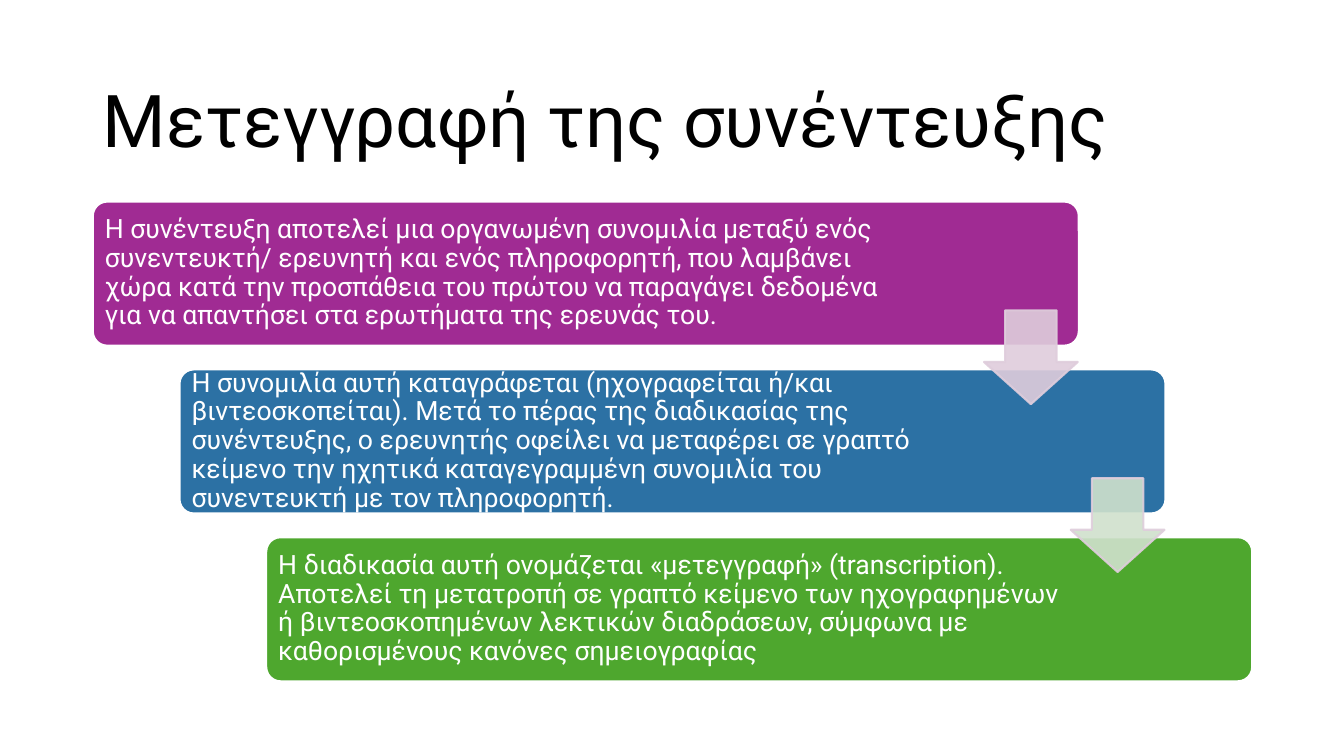
"""Build the slide on transcribing an interview: three stepped cards joined by arrows."""
from lxml import etree
from pptx import Presentation
from pptx.dml.color import RGBColor
from pptx.enum.shapes import MSO_SHAPE
from pptx.enum.text import MSO_ANCHOR
from pptx.oxml.ns import qn
from pptx.util import Inches, Pt

BLACK = RGBColor(0x00, 0x00, 0x00)
WHITE = RGBColor(0xFF, 0xFF, 0xFF)
PURPLE = RGBColor(0xA0, 0x2B, 0x93)
BLUE = RGBColor(0x2C, 0x71, 0xA4)
GREEN = RGBColor(0x4E, 0xA7, 0x2E)
PALE_PURPLE = RGBColor(0xDF, 0xCD, 0xDC)
PALE_GREEN = RGBColor(0xD0, 0xE1, 0xCD)

CARDS = [
    (PURPLE, 8.23, "Η συνέντευξη αποτελεί μια οργανωμένη συνομιλία μεταξύ ενός συνεντευκτή/ "
     "ερευνητή και ενός πληροφορητή, που λαμβάνει χώρα κατά την προσπάθεια του πρώτου να "
     "παραγάγει δεδομένα για να απαντήσει στα ερωτήματα της ερευνάς του."),
    (BLUE, 7.9, "Η συνομιλία αυτή καταγράφεται (ηχογραφείται ή/και βιντεοσκοπείται). Μετά το "
     "πέρας της διαδικασίας της συνέντευξης, ο ερευνητής οφείλει να μεταφέρει σε γραπτό "
     "κείμενο την ηχητικά καταγεγραμμένη συνομιλία του συνεντευκτή με τον πληροφορητή."),
    (GREEN, 7.9, "Η διαδικασία αυτή ονομάζεται «μετεγγραφή» (transcription). Αποτελεί τη "
     "μετατροπή σε γραπτό κείμενο των ηχογραφημένων ή βιντεοσκοπημένων λεκτικών διαδράσεων, "
     "σύμφωνα με καθορισμένους κανόνες σημειογραφίας"),
]
LEFT, TOP = 0.92, 2
STEP_X, STEP_Y = 0.86, 1.665
ARROW_SIZE = 0.93


def add_text(page, area, text, size, color, margins):
    box = page.shapes.add_textbox(*map(Inches, area))
    frame_format = {"word_wrap": True, "vertical_anchor": MSO_ANCHOR.MIDDLE}
    for side, margin in zip(("left", "top", "right", "bottom"), margins):
        frame_format[f"margin_{side}"] = Inches(margin)
    for name, value in frame_format.items():
        setattr(box.text_frame, name, value)
    para = box.text_frame.paragraphs[0]
    para.line_spacing = 0.9
    span = para.add_run()
    span.text = text
    span.font.color.rgb = color
    for name, value in {"name": "Roboto", "size": Pt(size)}.items():
        setattr(span.font, name, value)


def add_block(page, kind, area, adjustments, fill, line):
    block = page.shapes.add_shape(kind, *map(Inches, area))
    block.shadow.inherit = False
    for index, value in enumerate(adjustments):
        block.adjustments[index] = value
    block.fill.solid()
    block.fill.fore_color.rgb = fill
    block.line.color.rgb = line
    block.line.width = Pt(1.5)
    return block


deck = Presentation()
deck.slide_width, deck.slide_height = Inches(13.33), Inches(7.5)
page = deck.slides.add_slide(deck.slide_layouts[6])

add_text(page, (LEFT, 0.61, 11.5, 1.24), "Μετεγγραφή της συνέντευξης", 52, BLACK,
         (0.1, 0.05, 0.1, 0.05))

for index, (color, text_width, text) in enumerate(CARDS):
    left, top = LEFT + index * STEP_X, TOP + index * STEP_Y
    add_block(page, MSO_SHAPE.ROUNDED_RECTANGLE, (left, top, 9.78, 1.43), [0.1], color, WHITE)
    add_text(page, (left + 0.04, top + 0.04, text_width, 1.34), text, 19, WHITE, [0.08] * 4)

for index, color in enumerate((PALE_PURPLE, PALE_GREEN)):
    area = (9.76 + index * STEP_X, 3.08 + index * STEP_Y, ARROW_SIZE, ARROW_SIZE)
    arrow = add_block(page, MSO_SHAPE.DOWN_ARROW, area, [0.55, 0.45], color, PALE_PURPLE)
    for shade in arrow.element.spPr.iter(qn("a:srgbClr")):
        etree.SubElement(shade, qn("a:alpha"), val="90000")

deck.save("out.pptx")
